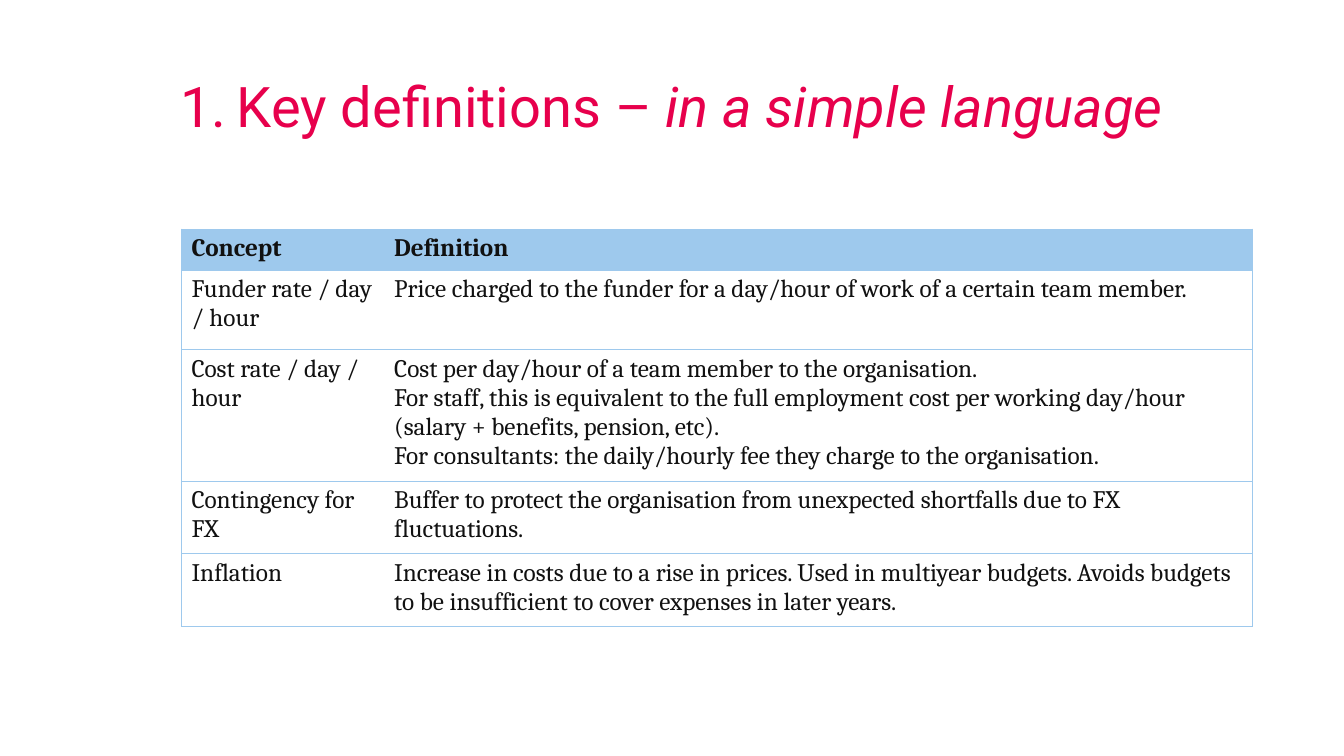
"""Build the key definitions slide."""
from dataclasses import dataclass

from lxml import etree
from pptx import Presentation
from pptx.dml.color import RGBColor
from pptx.enum.text import MSO_ANCHOR
from pptx.oxml.ns import qn
from pptx.util import Inches, Pt

PINK = RGBColor(0xE7, 0x00, 0x4C)
BLUE = RGBColor(0x9E, 0xC9, 0xED)
INK = RGBColor(0x11, 0x11, 0x11)
MIDDLE = MSO_ANCHOR.MIDDLE
TITLE = {"name": "Roboto", "size": Pt(40), "bold": False}
BODY = {"name": "Cambria", "size": Pt(18), "bold": False}
HEAD = BODY | {"bold": True}
WIDTHS = (2.01, 8.61)


@dataclass
class Entry:
    """One row of the table."""
    term: str
    lines: tuple[str, ...]
    height: float


ENTRIES = (
    Entry("Concept", ("Definition",), 0.41),
    Entry("Funder rate / day / hour", (
        "Price charged to the funder for a day/hour of work of a certain team member.",), 0.79),
    Entry("Cost rate / day / hour", (
        "Cost per day/hour of a team member to the organisation.",
        "For staff, this is equivalent to the full employment cost per working day/hour "
        "(salary + benefits, pension, etc).",
        "For consultants: the daily/hourly fee they charge to the organisation."), 1.25),
    Entry("Contingency for FX", (
        "Buffer to protect the organisation from unexpected shortfalls due to "
        "FX fluctuations.",), 0.72),
    Entry("Inflation", (
        "Increase in costs due to a rise in prices. Used in multiyear budgets. "
        "Avoids budgets to be insufficient to cover expenses in later years.",), 0.72),
)


def style(font, looks: dict, color: RGBColor) -> None:
    """Set the font values and colour."""
    for key, value in looks.items():
        setattr(font, key, value)
    font.color.rgb = color


def edge(cell, side: str, shown: bool) -> None:
    """Draw or hide one border of a cell."""
    line = etree.SubElement(cell._tc.get_or_add_tcPr(), qn(f"a:ln{side}"), w=str(Pt(0.5)))
    if shown:
        fill = etree.SubElement(line, qn("a:solidFill"))
        etree.SubElement(fill, qn("a:srgbClr"), val=str(BLUE))
    else:
        etree.SubElement(line, qn("a:noFill"))


def add_title(slide) -> None:
    """Add the numbered title."""
    box = slide.shapes.add_textbox(Inches(1.79), Inches(0.76), Inches(10.63), Inches(0.66))
    frame = box.text_frame
    frame.word_wrap = True
    frame.vertical_anchor = MIDDLE
    for side in ("left", "right", "top", "bottom"):
        setattr(frame, f"margin_{side}", 0)
    para = frame.paragraphs[0]
    para.line_spacing = 0.9
    props = para._p.get_or_add_pPr()
    props.set("marL", str(Inches(0.56)))
    props.set("indent", str(Inches(-0.56)))
    etree.SubElement(props, qn("a:buFont"), typeface="Roboto")
    etree.SubElement(props, qn("a:buAutoNum"), type="arabicPeriod")
    for text, slant in (("Key definitions – ", False), ("in a simple language", True)):
        run = para.add_run()
        run.text = text
        style(run.font, TITLE | {"italic": slant}, PINK)


def add_grid(slide) -> None:
    """Add the table of definitions."""
    total = sum(entry.height for entry in ENTRIES)
    table = slide.shapes.add_table(
        len(ENTRIES), len(WIDTHS), Inches(1.8), Inches(2.27),
        Inches(sum(WIDTHS)), Inches(total)).table
    table.horz_banding = False
    for col, width in zip(table.columns, WIDTHS):
        col.width = Inches(width)
    for i, entry in enumerate(ENTRIES):
        table.rows[i].height = Inches(entry.height)
        for j, lines in enumerate(((entry.term,), entry.lines)):
            cell = table.cell(i, j)
            cell.text = "\n".join(lines)
            for para in cell.text_frame.paragraphs:
                for run in para.runs:
                    style(run.font, BODY if i else HEAD, INK)
            for side, shown in (("L", j == 0), ("R", j == 1), ("T", True), ("B", True)):
                edge(cell, side, shown)
            if i:
                cell.fill.background()
            else:
                cell.fill.solid()
                cell.fill.fore_color.rgb = BLUE


def main() -> None:
    """Build and save the deck."""
    deck = Presentation()
    deck.slide_width = Inches(13.33)
    deck.slide_height = Inches(7.5)
    slide = deck.slides.add_slide(deck.slide_layouts[6])
    add_title(slide)
    add_grid(slide)
    deck.save("out.pptx")


if __name__ == "__main__":
    main()
